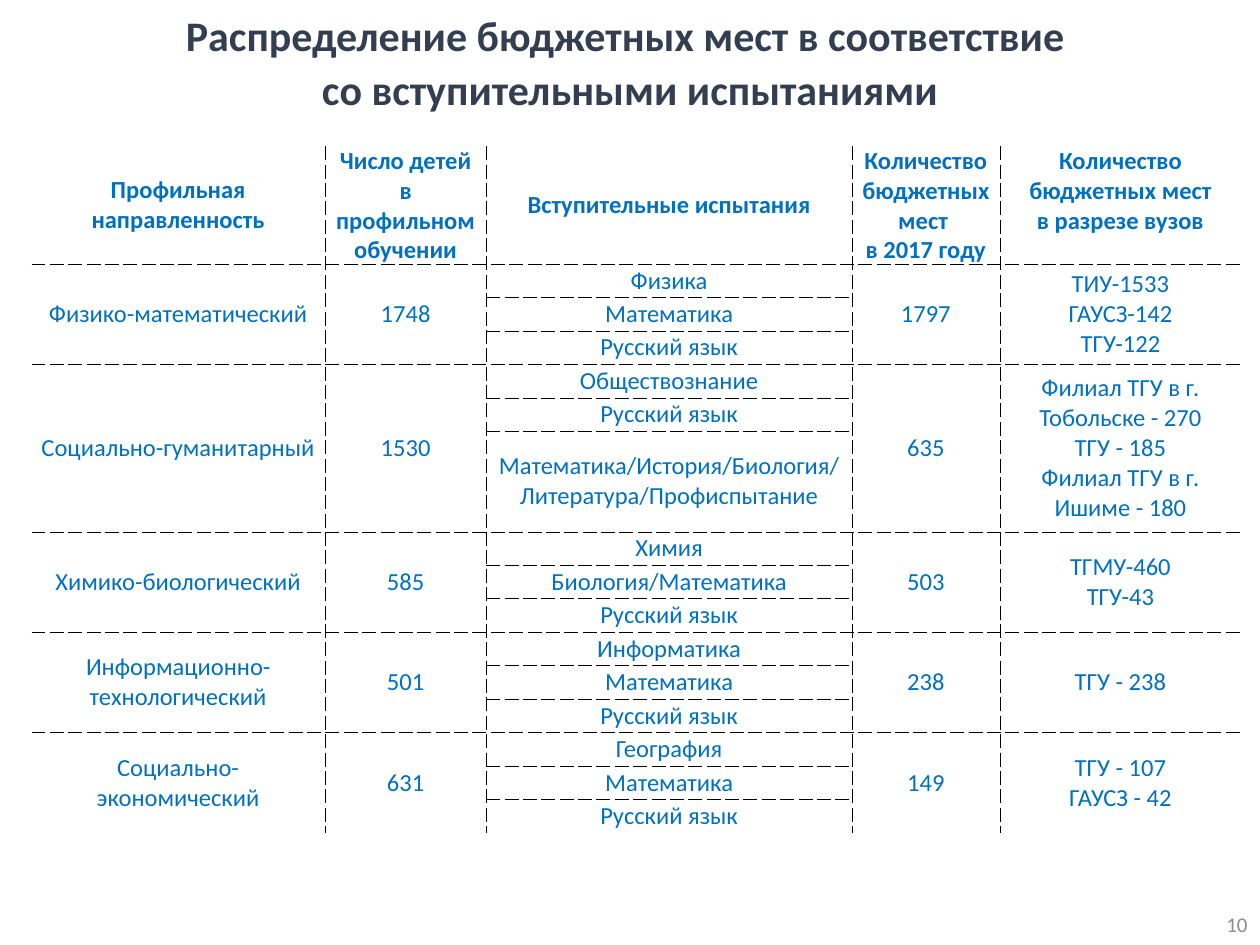
from lxml.etree import SubElement
from pptx import Presentation
from pptx.dml.color import RGBColor
from pptx.enum.text import MSO_ANCHOR as Anchor, PP_ALIGN as Align
from pptx.oxml.ns import qn
from pptx.util import Pt

NAVY = RGBColor(0x33, 0x3F, 0x50)
BLUE = RGBColor(0x00, 0x70, 0xC0)
GRAY = RGBColor(0x8C, 0x8C, 0x8C)
BORDER = RGBColor(0x00, 0x00, 0x00)
PLAIN_TABLE_STYLE = "{2D5ABB26-0587-4C30-8999-92F81FD0307C}"

COLUMN_WIDTHS = [167.6, 92.4, 208.8, 84.6, 137.8]
HEADER_HEIGHT = 57.6
EXAM_HEIGHT = 19.15
TALL_EXAM_HEIGHT = 57.4
EXAM_COLUMN = 2

HEADERS = [
    "Профильная направленность",
    "Число детей в профильном обучении",
    "Вступительные испытания",
    "Количество бюджетных мест \nв 2017 году",
    "Количество бюджетных мест в\u00a0разрезе вузов",
]
# Profile, children, exams, places, places by university
PROFILES = [
    ("Физико-математический", "1748",
     ["Физика", "Математика", "Русский язык"],
     "1797", "ТИУ-1533\nГАУСЗ-142\nТГУ-122"),
    ("Социально-гуманитарный", "1530",
     ["Обществознание", "Русский язык",
      "Математика/История/Биология/\nЛитература/Профиспытание"],
     "635", "Филиал ТГУ в г. Тобольске - 270\nТГУ - 185\n"
     "Филиал ТГУ в г. Ишиме - 180"),
    ("Химико-биологический", "585",
     ["Химия", "Биология/Математика", "Русский язык"],
     "503", "ТГМУ-460\nТГУ-43"),
    ("Информационно-технологический", "501",
     ["Информатика", "Математика", "Русский язык"],
     "238", "ТГУ - 238"),
    ("Социально-экономический", "631",
     ["География", "Математика", "Русский язык"],
     "149", "ТГУ - 107\nГАУСЗ - 42"),
]


def write_text(frame, text, align, size, color, bold=False, spacing=None):
    """Fill a text frame; each newline starts a paragraph, each \\v a line."""
    frame.text = text
    for paragraph in frame.paragraphs:
        paragraph.alignment = align
        paragraph.line_spacing = spacing
        font_format = {"name": "Calibri", "size": Pt(size), "bold": bold}
        for run in paragraph.runs:
            for name, value in font_format.items():
                setattr(run.font, name, value)
            run.font.color.rgb = color


def add_label(slide, box, text, anchor, **text_format):
    shape = slide.shapes.add_textbox(*map(Pt, box))
    shape.text_frame.word_wrap = True
    shape.text_frame.vertical_anchor = anchor
    write_text(shape.text_frame, text, **text_format)


def add_dashed_borders(cell, sides):
    properties = cell._tc.get_or_add_tcPr()
    for side in sides:
        line = SubElement(properties, qn(f"a:ln{side}"), w=str(Pt(0.25)))
        fill = SubElement(line, qn("a:solidFill"))
        SubElement(fill, qn("a:srgbClr"), val=str(BORDER))
        SubElement(line, qn("a:prstDash"), val="sysDash")


def fill_cell(table, row, column, text, bold=False, anchor=Anchor.MIDDLE):
    """Write one cell and rule the sides that it shares with other cells."""
    cell = table.cell(row, column)
    cell_format = {
        "margin_left": Pt(4.5), "margin_right": Pt(4.5),
        "margin_top": 0, "margin_bottom": 0, "vertical_anchor": anchor,
    }
    for name, value in cell_format.items():
        setattr(cell, name, value)
    write_text(cell.text_frame, text, Align.CENTER, 14, BLUE, bold)
    inner_sides = {
        "L": column > 0,
        "R": column < len(table.columns) - 1,
        "T": row > 0,
        "B": row + cell.span_height < len(table.rows),
    }
    add_dashed_borders(cell, [side for side, inner in inner_sides.items() if inner])
    cell.fill.background()


def add_profile(table, top_row, profile):
    """Fill one profile: a row for each exam, other columns merged over them."""
    exams = profile[EXAM_COLUMN]
    last_row = top_row + len(exams) - 1
    for column, content in enumerate(profile):
        if column != EXAM_COLUMN:
            table.cell(top_row, column).merge(table.cell(last_row, column))
            fill_cell(table, top_row, column, content)
    for row, exam in enumerate(exams, top_row):
        fill_cell(table, row, EXAM_COLUMN, exam)


def add_places_table(slide, left, top):
    exams = [exam for profile in PROFILES for exam in profile[EXAM_COLUMN]]
    heights = [HEADER_HEIGHT] + [
        TALL_EXAM_HEIGHT if "\n" in exam else EXAM_HEIGHT for exam in exams]
    frame = slide.shapes.add_table(
        len(heights), len(COLUMN_WIDTHS), Pt(left), Pt(top),
        Pt(sum(COLUMN_WIDTHS)), Pt(sum(heights)))
    table = frame.table
    table.horz_banding = False
    table.first_row = False
    table._tbl.tblPr.find(qn("a:tableStyleId")).text = PLAIN_TABLE_STYLE
    for column, width in zip(table.columns, COLUMN_WIDTHS):
        column.width = Pt(width)
    for row, height in zip(table.rows, heights):
        row.height = Pt(height)

    for column, header in enumerate(HEADERS):
        anchor = Anchor.MIDDLE if column <= EXAM_COLUMN else Anchor.TOP
        fill_cell(table, 0, column, header, True, anchor)
    top_row = 1
    for profile in PROFILES:
        add_profile(table, top_row, profile)
        top_row += len(profile[EXAM_COLUMN])


def main():
    presentation = Presentation()
    presentation.slide_width, presentation.slide_height = Pt(720), Pt(540)
    slide = presentation.slides.add_slide(presentation.slide_layouts[6])
    add_label(
        slide, (0, 0, 720, 68.4),
        "Распределение бюджетных мест в соответствие \vсо вступительными испытаниями",
        Anchor.TOP, align=Align.CENTER, size=24, color=NAVY, bold=True, spacing=1.07)
    add_places_table(slide, 18, 83.5)
    add_label(slide, (558, 513.4, 162, 28.8), "10", Anchor.MIDDLE,
              align=Align.RIGHT, size=12, color=GRAY)
    presentation.save("out.pptx")


if __name__ == "__main__":
    main()
